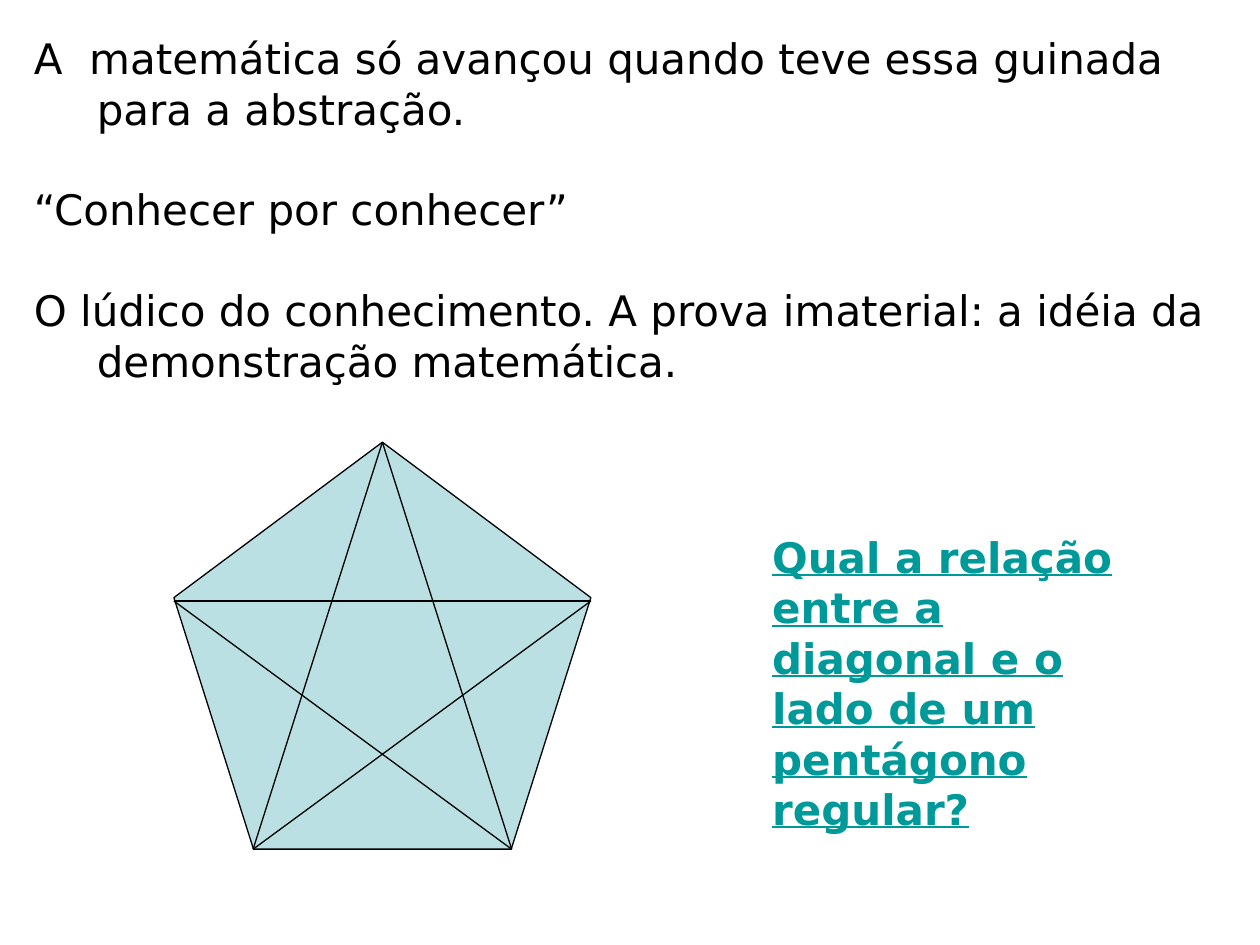
from dataclasses import dataclass

from lxml.etree import SubElement
from pptx import Presentation
from pptx.dml.color import RGBColor
from pptx.enum.shapes import MSO_CONNECTOR as Connector, MSO_SHAPE as Shape
from pptx.oxml.ns import qn
from pptx.util import Inches, Pt


@dataclass(frozen=True)
class Theme:
    font: str = "DejaVu Sans"
    text_size: float = 24
    line_width: float = 0.75
    paragraph_gap: float = 28.8
    text: RGBColor = RGBColor(0x00, 0x00, 0x00)
    accent: RGBColor = RGBColor(0x00, 0x99, 0x99)
    fill: RGBColor = RGBColor(0xBB, 0xE0, 0xE3)
    line: RGBColor = RGBColor(0x00, 0x00, 0x00)


THEME = Theme()

STATEMENTS = [
    "A  matemática só avançou quando teve essa guinada para a abstração.",
    "“Conhecer por conhecer”",
    "O lúdico do conhecimento. A prova imaterial: a idéia da demonstração matemática.",
]
QUESTION = "Qual a relação entre a diagonal e o lado de um pentágono regular?"

# Corners in order around the pentagon, as fractions of its box.
CORNERS = [(0.5, 0), (1, 0.39), (0.81, 1), (0.19, 1), (0, 0.39)]


def add_text(slide, box, paragraphs, color=THEME.text, bold=False,
             underline=False, hanging=0, gap=0):
    """Add a text box; hanging is the hanging indent in inches, gap is in points."""
    frame = slide.shapes.add_textbox(*map(Inches, box)).text_frame
    frame.word_wrap = True
    for index, text in enumerate(paragraphs):
        paragraph = frame.paragraphs[0] if index == 0 else frame.add_paragraph()
        if index and gap:
            paragraph.space_before = Pt(gap)
        if hanging:
            properties = paragraph._p.get_or_add_pPr()
            properties.set("marL", str(Inches(hanging)))
            properties.set("indent", str(-Inches(hanging)))
        run = paragraph.add_run()
        run.text = text
        font = run.font
        font.name, font.size = THEME.font, Pt(THEME.text_size)
        font.bold, font.underline = bold, underline
        font.color.rgb = color


def format_line(line):
    line.color.rgb = THEME.line
    line.width = Pt(THEME.line_width)


def add_diagonal(shapes, start, end):
    diagonal = shapes.add_connector(
        Connector.STRAIGHT, *map(Inches, (*start, *end)))
    format_line(diagonal.line)
    SubElement(diagonal._element.spPr, qn("a:effectLst"))


def add_pentagon(slide, box):
    """Add a grouped pentagon with its five diagonals."""
    left, top, width, height = box
    shapes = slide.shapes.add_group_shape().shapes
    pentagon = shapes.add_shape(Shape.REGULAR_PENTAGON, *map(Inches, box))
    pentagon.shadow.inherit = False
    pentagon.fill.solid()
    pentagon.fill.fore_color.rgb = THEME.fill
    format_line(pentagon.line)

    corners = [(left + x * width, top + y * height) for x, y in CORNERS]
    for index, corner in enumerate(corners):
        add_diagonal(shapes, corner, corners[(index + 2) % len(corners)])


def main():
    presentation = Presentation()
    presentation.slide_width, presentation.slide_height = Inches(10), Inches(7.5)
    slide = presentation.slides.add_slide(presentation.slide_layouts[6])
    add_text(slide, (0.17, 0.21, 9.83, 2.9), STATEMENTS,
             hanging=0.5, gap=THEME.paragraph_gap)
    add_text(slide, (6.03, 4.17, 2.91, 2.5), [QUESTION],
             color=THEME.accent, bold=True, underline=True)
    add_pentagon(slide, (1.38, 3.51, 3.31, 3.23))
    presentation.save("out.pptx")


if __name__ == "__main__":
    main()
